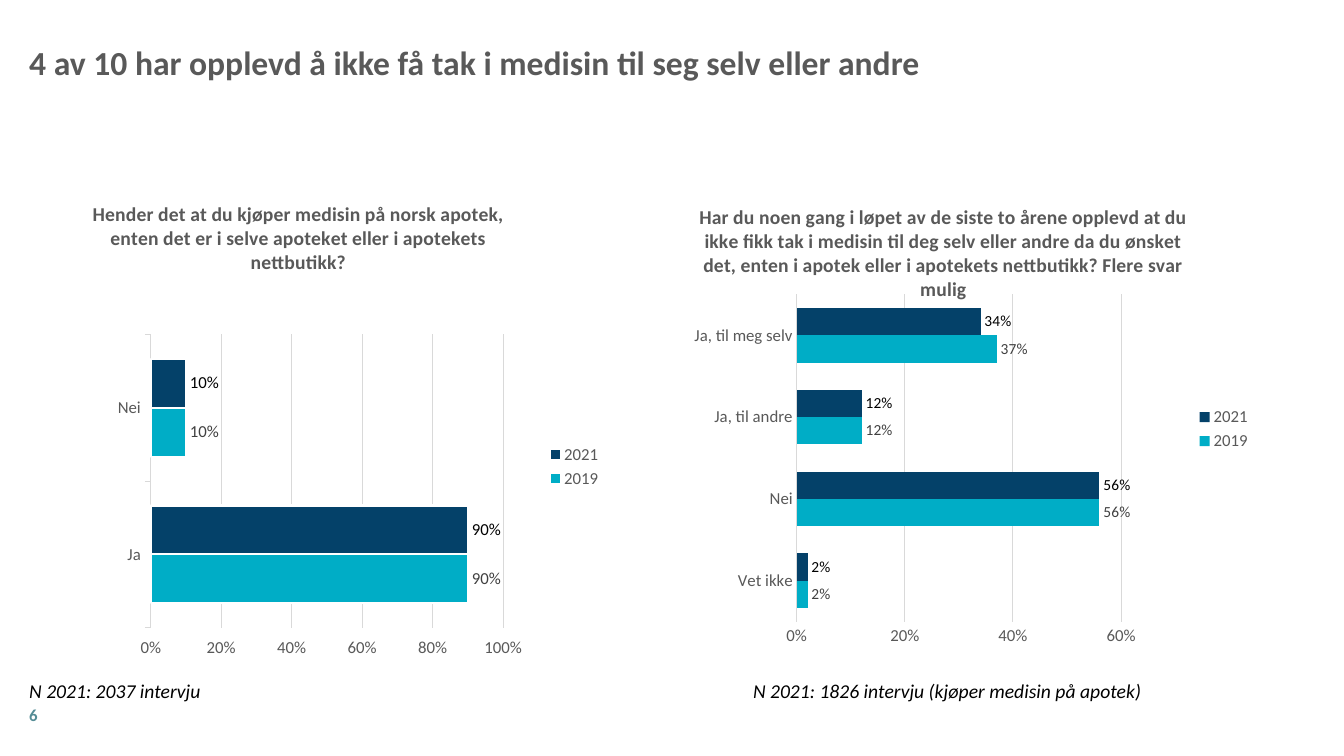
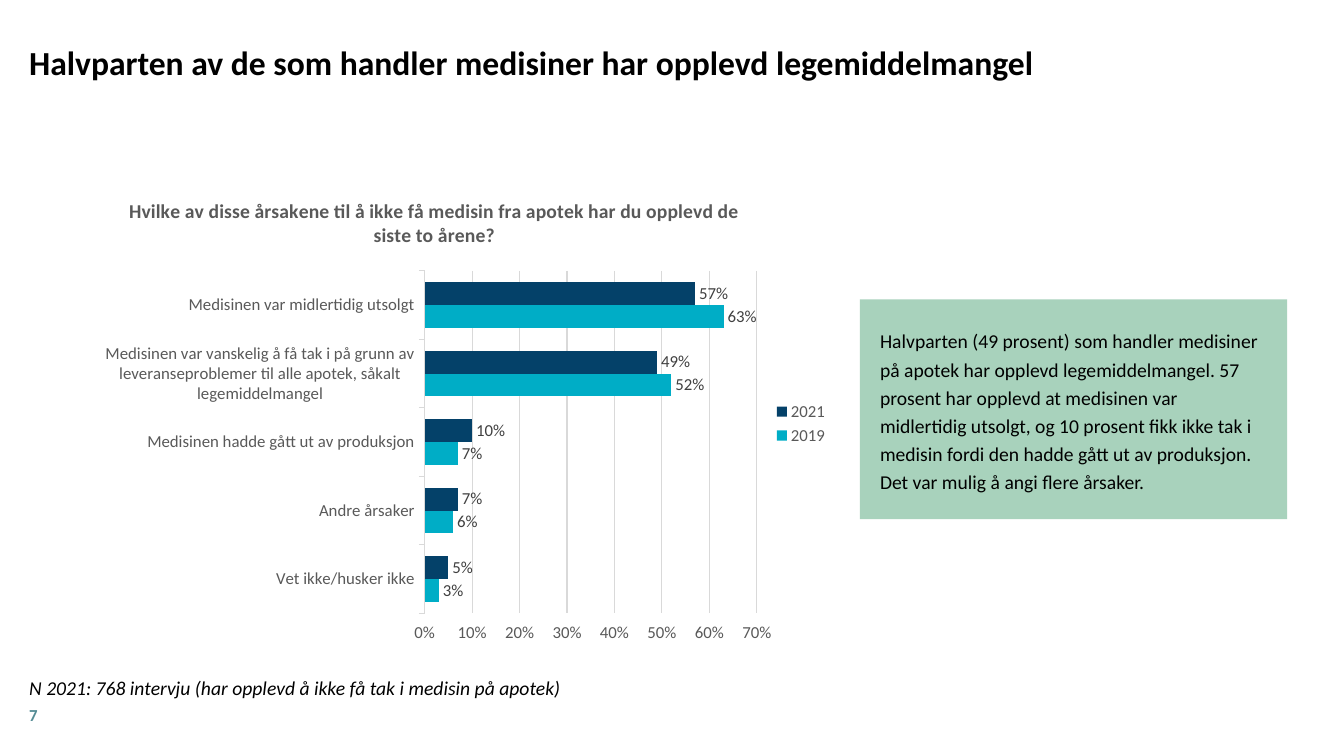
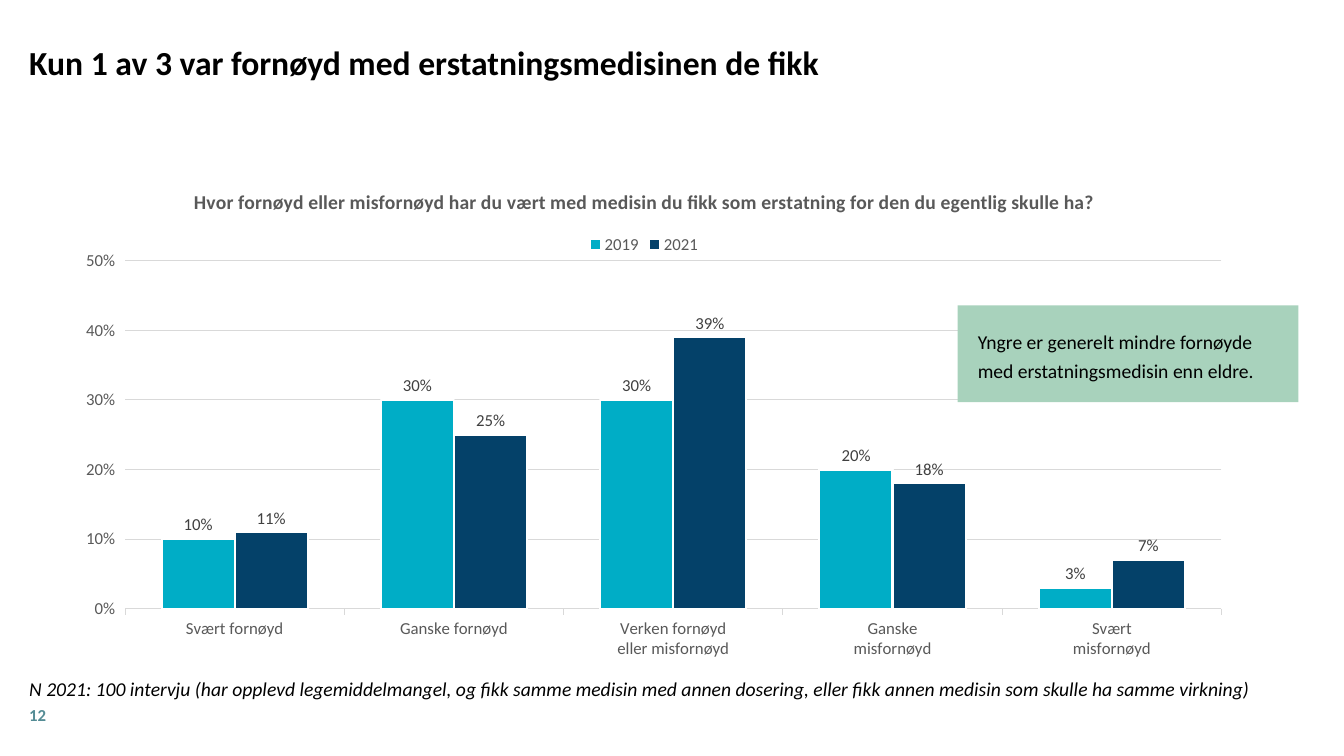
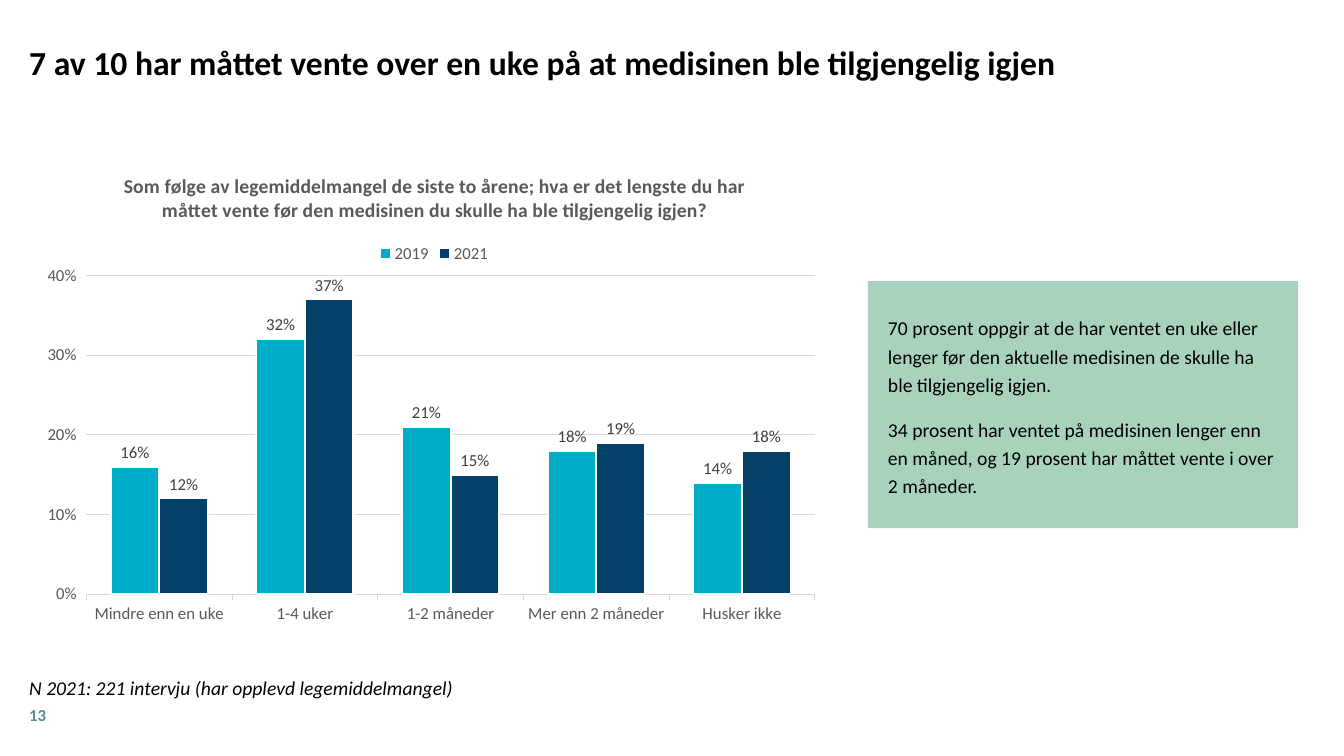
from dataclasses import dataclass
from typing import Optional

from lxml import etree
from pptx import Presentation
from pptx import util as u
from pptx.chart import data as chart_data
from pptx.dml import color
from pptx.enum import chart as charts, shapes, text
from pptx.oxml import ns


@dataclass(frozen=True)
class Theme:
    font: str = "Calibri"
    black: str = "000000"
    gray: str = "595959"
    label: str = "404040"
    grid: str = "D9D9D9"
    white: str = "FFFFFF"
    cyan: str = "00ADC6"
    navy: str = "044169"
    mint: str = "A8D2BC"
    page: str = "548C95"
    title_size: int = 24
    body_size: int = 14
    small_size: int = 12


THEME = Theme()
MARGIN = 20.9
WIDE = 919.4
BAR = charts.XL_CHART_TYPE.BAR_CLUSTERED
COLUMN = charts.XL_CHART_TYPE.COLUMN_CLUSTERED
SERIES_COLORS = {"2019": THEME.cyan, "2021": THEME.navy}


@dataclass(frozen=True)
class Survey:
    box: tuple
    plot: tuple
    legend: tuple
    question: tuple
    categories: tuple
    values: dict
    maximum: float
    major: float
    kind: object = BAR
    outlined: bool = False
    ticks: bool = True
    label_size: int = 12
    newest_label: str = THEME.label
    title_at: Optional[tuple] = None


def rgb(value):
    return color.RGBColor.from_string(value)


def set_font(font, size, tint, bold=False, italic=False):
    font.name = THEME.font
    font.size = u.Pt(size)
    font.color.rgb = rgb(tint)
    font.bold = bold
    font.italic = italic


def write(frame, paragraphs, size, tint=THEME.black, bold=False, italic=False,
          line=1.0, gap=0, tab=None, align=None):
    for index, words in enumerate(paragraphs):
        paragraph = frame.paragraphs[0] if index == 0 else frame.add_paragraph()
        if tab:
            properties = paragraph._p.get_or_add_pPr()
            stops = etree.SubElement(properties, ns.qn("a:tabLst"))
            etree.SubElement(stops, ns.qn("a:tab"), pos=str(u.Pt(tab)), algn="l")
        run = paragraph.add_run()
        run.text = words
        set_font(run.font, size, tint, bold, italic)
        paragraph.line_spacing = line
        if align is not None:
            paragraph.alignment = align
        if index and gap:
            paragraph.space_before = u.Pt(gap)


def prepare_frame(shape, inset, anchor):
    frame = shape.text_frame
    frame.word_wrap = True
    frame.vertical_anchor = anchor
    frame.margin_left = frame.margin_right = u.Pt(inset)
    frame.margin_top = frame.margin_bottom = u.Pt(inset)
    return frame


def add_text(slide, box, paragraphs, anchor=text.MSO_ANCHOR.MIDDLE, **style):
    shape = slide.shapes.add_textbox(*map(u.Pt, box))
    write(prepare_frame(shape, 0, anchor), paragraphs, **style)


def add_callout(slide, box, paragraphs):
    shape = slide.shapes.add_shape(shapes.MSO_SHAPE.RECTANGLE, *map(u.Pt, box))
    shape.shadow.inherit = False
    shape.fill.solid()
    shape.fill.fore_color.rgb = rgb(THEME.mint)
    shape.line.fill.background()
    frame = prepare_frame(shape, 14.4, text.MSO_ANCHOR.MIDDLE)
    write(frame, paragraphs, THEME.body_size, line=1.2, gap=12,
          align=text.PP_ALIGN.LEFT)


def place_part(parent, index, box, area, inner=False):
    for old in parent.findall(ns.qn("c:layout")):
        parent.remove(old)
    layout = etree.Element(ns.qn("c:layout"))
    manual = etree.SubElement(layout, ns.qn("c:manualLayout"))
    fractions = [(area[0] - box[0]) / box[2], (area[1] - box[1]) / box[3]]
    fractions += [area[i] / box[i] for i in range(2, len(area))]
    settings = [("layoutTarget", "inner")] if inner else []
    settings += [("xMode", "edge"), ("yMode", "edge")]
    settings += [(name, f"{value:.4f}") for name, value in zip("xywh", fractions)]
    for name, value in settings:
        etree.SubElement(manual, ns.qn("c:" + name), val=value)
    parent.insert(index, layout)


def style_axes(chart, survey):
    tick = charts.XL_TICK_MARK.OUTSIDE if survey.ticks else charts.XL_TICK_MARK.NONE
    category, value = chart.category_axis, chart.value_axis
    for axis in (category, value):
        axis.major_tick_mark = tick
        axis.minor_tick_mark = charts.XL_TICK_MARK.NONE
        set_font(axis.tick_labels.font, THEME.small_size, THEME.gray)
    value.has_major_gridlines = True
    for line in (category.format.line, value.major_gridlines.format.line):
        line.color.rgb = rgb(THEME.grid)
        line.width = u.Pt(0.75)
    value.format.line.fill.background()
    value.minimum_scale = 0
    value.maximum_scale = survey.maximum
    value.major_unit = survey.major
    value.tick_labels.number_format = "0%"
    value.tick_labels.number_format_is_linked = False


def style_series(series, survey):
    series.format.fill.solid()
    series.format.fill.fore_color.rgb = rgb(SERIES_COLORS[series.name])
    if survey.outlined:
        series.format.line.color.rgb = rgb(THEME.white)
        series.format.line.width = u.Pt(1.5)
    else:
        series.format.line.fill.background()
    labels = series.data_labels
    labels.show_value = True
    labels.number_format = "0%"
    labels.number_format_is_linked = False
    labels.position = charts.XL_LABEL_POSITION.OUTSIDE_END
    tint = survey.newest_label if series.name == "2021" else THEME.label
    set_font(labels.font, survey.label_size, tint)


def add_survey(slide, survey):
    data = chart_data.CategoryChartData(number_format="0%")
    data.categories = survey.categories
    for name, values in survey.values.items():
        data.add_series(name, values)
    chart = slide.shapes.add_chart(survey.kind, *map(u.Pt, survey.box), data).chart
    set_font(chart.font, THEME.small_size, THEME.gray)
    chart.has_title = True
    write(chart.chart_title.text_frame, survey.question, THEME.body_size,
          THEME.gray, bold=True)
    chart.has_legend = True
    positions = charts.XL_LEGEND_POSITION
    chart.legend.position = positions.RIGHT if survey.kind == BAR else positions.TOP
    chart.legend.include_in_layout = False
    set_font(chart.legend.font, THEME.small_size, THEME.gray)
    bars = chart.plots[0]
    bars.gap_width = 100
    bars.overlap = 0
    bars.vary_by_categories = False
    for series in bars.series:
        style_series(series, survey)
    style_axes(chart, survey)
    root = chart.element
    place_part(root.xpath("c:chart/c:plotArea")[0], 0, survey.box, survey.plot, True)
    place_part(root.xpath("c:chart/c:legend")[0], 1, survey.box, survey.legend)
    if survey.title_at:
        place_part(root.xpath("c:chart/c:title")[0], 1, survey.box, survey.title_at)


def add_page(presentation, number, title, sample, surveys, callout=None,
             title_color=THEME.black, sample_top=476.6, sample_tab=None):
    slide = presentation.slides.add_slide(presentation.slide_layouts[6])
    add_text(slide, (MARGIN, 503.3, 18, 14.4), [number], size=THEME.small_size,
             tint=THEME.page, bold=True)
    for survey in surveys:
        add_survey(slide, survey)
    add_text(slide, (MARGIN, sample_top, WIDE, 23), [sample],
             anchor=text.MSO_ANCHOR.BOTTOM, size=THEME.body_size, italic=True,
             line=1.1, tab=sample_tab)
    add_text(slide, (MARGIN, 12.2, WIDE, 61.2), [title], size=THEME.title_size,
             tint=title_color, bold=True, line=1.1)
    if callout:
        add_callout(slide, *callout)


BUYERS = Survey(
    box=(18.7, 141.1, 414, 342.7), plot=(107.7, 238.8, 251.7, 209.7),
    legend=(389, 315), title_at=(64, 141.1),
    question=("Hender det at du kjøper medisin på norsk apotek,",
              "enten det er i selve apoteket eller i apotekets nettbutikk?"),
    categories=("Ja", "Nei"),
    values={"2019": (0.9, 0.1), "2021": (0.9, 0.1)},
    maximum=1, major=0.2, outlined=True, newest_label=THEME.black)

SHORTAGE = Survey(
    box=(455, 141.1, 445.7, 331.2), plot=(569.1, 210.3, 231.8, 233.8),
    legend=(853, 288), title_at=(497, 142.5),
    question=("Har du noen gang i løpet av de siste to årene opplevd at du ikke fikk "
              "tak i medisin til deg selv eller andre da du ønsket det, enten i apotek "
              "eller i apotekets nettbutikk? Flere svar mulig",),
    categories=("Vet ikke", "Nei", "Ja, til andre", "Ja, til meg selv"),
    values={"2019": (0.02, 0.56, 0.12, 0.37), "2021": (0.02, 0.56, 0.12, 0.34)},
    maximum=0.6, major=0.2, ticks=False, label_size=11, newest_label=THEME.black)

REASONS = Survey(
    box=(21.6, 127.4, 577.4, 349.9), plot=(303.4, 193.5, 237.3, 244.6),
    legend=(551, 284),
    question=("Hvilke av disse årsakene til å ikke få medisin fra apotek har du "
              "opplevd de siste to årene?",),
    categories=("Vet ikke/husker ikke", "Andre årsaker",
                "Medisinen hadde gått ut av produksjon",
                "Medisinen var vanskelig å få tak i på grunn av leveranseproblemer "
                "til alle apotek, såkalt legemiddelmangel",
                "Medisinen var midlertidig utsolgt"),
    values={"2019": (0.03, 0.06, 0.07, 0.52, 0.63),
            "2021": (0.05, 0.07, 0.1, 0.49, 0.57)},
    maximum=0.7, major=0.1)

SATISFACTION = Survey(
    box=(14.4, 121, 892.1, 354.2), plot=(89.3, 186.2, 783.3, 248.7),
    legend=(418, 165), kind=COLUMN,
    question=("Hvor fornøyd eller misfornøyd har du vært med medisin du fikk som "
              "erstatning for den du egentlig skulle ha?",),
    categories=("Svært fornøyd", "Ganske fornøyd", "Verken fornøyd\neller misfornøyd",
                "Ganske\nmisfornøyd", "Svært\nmisfornøyd"),
    values={"2019": (0.1, 0.3, 0.3, 0.2, 0.03),
            "2021": (0.11, 0.25, 0.39, 0.18, 0.07)},
    maximum=0.5, major=0.1, outlined=True)

WAITING = Survey(
    box=(14.4, 109.4, 592.6, 359.3), plot=(61.8, 196.7, 520.3, 227.8),
    legend=(268, 171), kind=COLUMN,
    question=("Som følge av legemiddelmangel de siste to årene; hva er det lengste du "
              "har måttet vente før den medisinen du skulle ha ble tilgjengelig igjen?",),
    categories=("Mindre enn en uke", "1-4 uker", "1-2 måneder", "Mer enn 2 måneder",
                "Husker ikke"),
    values={"2019": (0.16, 0.32, 0.21, 0.18, 0.14),
            "2021": (0.12, 0.37, 0.15, 0.19, 0.18)},
    maximum=0.4, major=0.1, outlined=True)


def main():
    presentation = Presentation()
    presentation.slide_width = u.Pt(960)
    presentation.slide_height = u.Pt(540)
    add_page(presentation, "6",
             "4 av 10 har opplevd å ikke få tak i medisin til seg selv eller andre",
             "N 2021: 2037 intervju\tN 2021: 1826 intervju (kjøper medisin på apotek)",
             [BUYERS, SHORTAGE], title_color=THEME.gray, sample_top=478.8,
             sample_tab=517)
    add_page(presentation, "7",
             "Halvparten av de som handler medisiner har opplevd legemiddelmangel",
             "N 2021: 768 intervju (har opplevd å ikke få tak i medisin på apotek)",
             [REASONS],
             ((614.2, 213.8, 305.3, 157),
              ["Halvparten (49 prosent) som handler medisiner på apotek har opplevd "
               "legemiddelmangel. 57 prosent har opplevd at medisinen var midlertidig "
               "utsolgt, og 10 prosent fikk ikke tak i medisin fordi den hadde gått ut "
               "av produksjon. Det var mulig å angi flere årsaker."]))
    add_page(presentation, "12",
             "Kun 1 av 3 var fornøyd med erstatningsmedisinen de fikk",
             "N 2021: 100 intervju (har opplevd legemiddelmangel, og fikk samme medisin "
             "med annen dosering, eller fikk annen medisin som skulle ha samme virkning)",
             [SATISFACTION],
             ((684, 218.2, 243.4, 69.1),
              ["Yngre er generelt mindre fornøyde med erstatningsmedisin enn eldre."]),
             sample_top=477.4)
    add_page(presentation, "13",
             "7 av 10 har måttet vente over en uke på at medisinen ble tilgjengelig igjen",
             "N 2021: 221 intervju (har opplevd legemiddelmangel)",
             [WAITING],
             ((619.9, 200.9, 307.4, 176.4),
              ["70 prosent oppgir at de har ventet en uke eller lenger før den aktuelle "
               "medisinen de skulle ha ble tilgjengelig igjen.",
               "34 prosent har ventet på medisinen lenger enn en måned, og 19 prosent "
               "har måttet vente i over 2 måneder."]))
    presentation.save("out.pptx")


if __name__ == "__main__":
    main()
